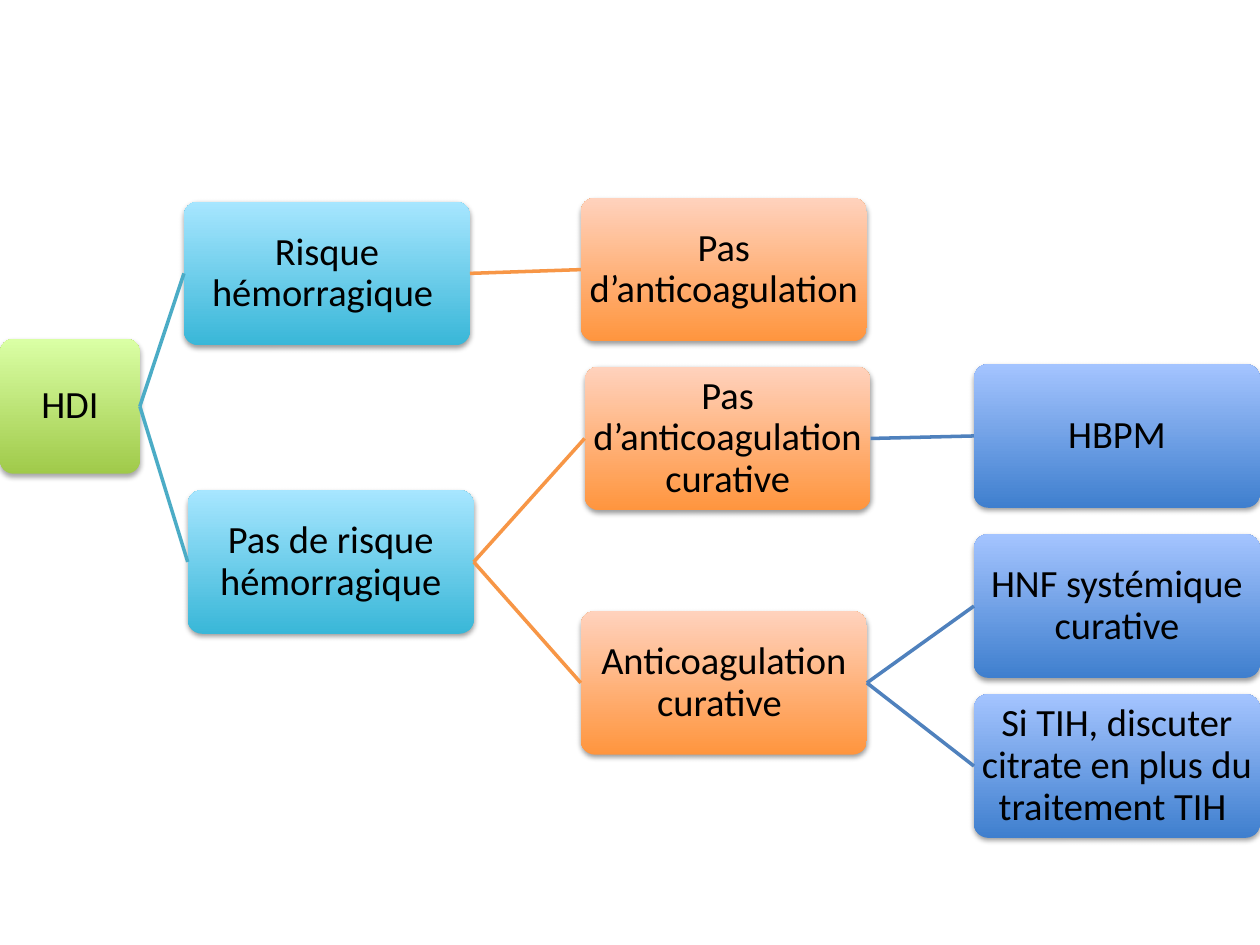
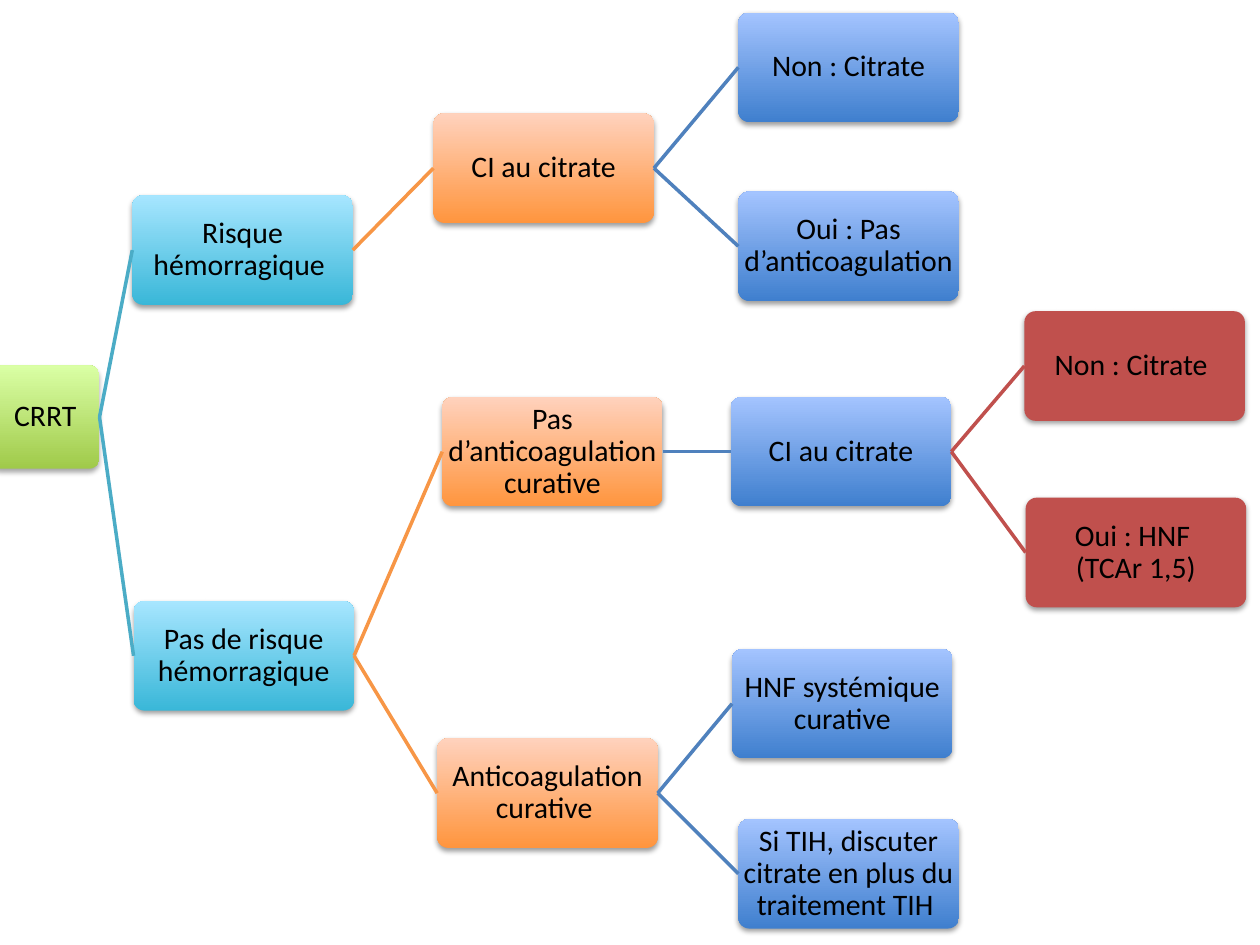
"""Build two decision trees on anticoagulation, for HDI and for CRRT."""
from lxml.etree import SubElement
from pptx import Presentation
from pptx.dml.color import RGBColor
from pptx.enum.shapes import MSO_CONNECTOR, MSO_SHAPE
from pptx.enum.text import MSO_ANCHOR, PP_ALIGN
from pptx.oxml.ns import qn
from pptx.util import Inches, Pt

FONT = "Calibri"
TEXT = "000000"
FILLS = [("A0CA4A", "DAFFA5"), ("39B7D8", "A7E6FF"), ("FF953E", "FFD2BD"),
         ("3F7FCE", "A4C4FF"), ("C0504D",)]
LINES = [None, "4BACC6", "F79646", "4F81BD", "C0504D"]

# Each node: text, level, left, top, index of its parent
HDI = [
    ("HDI", 0, 0, 2.69, None),
    ("Risque hémorragique ", 1, 1.46, 1.6, 0),
    ("Pas d’anticoagulation ", 2, 4.61, 1.57, 1),
    ("Pas de risque hémorragique", 1, 1.49, 3.89, 0),
    ("Pas d’anticoagulation curative", 2, 4.64, 2.91, 3),
    ("HBPM", 3, 7.73, 2.89, 4),
    ("Anticoagulation curative ", 2, 4.61, 4.85, 3),
    ("HNF systémique curative", 3, 7.73, 4.24, 6),
    ("Si TIH, discuter citrate en plus du traitement TIH ", 3, 7.73, 5.51, 6),
]
CRRT = [
    ("CRRT", 0, -0.07, 2.9, None),
    ("Risque hémorragique ", 1, 1.05, 1.55, 0),
    ("CI au citrate", 2, 3.44, 0.9, 1),
    ("Non : Citrate", 3, 5.86, 0.1, 2),
    ("Oui : Pas d’anticoagulation", 3, 5.86, 1.52, 2),
    ("Pas de risque hémorragique", 1, 1.06, 4.77, 0),
    ("Pas d’anticoagulation curative", 2, 3.51, 3.15, 5),
    ("CI au citrate", 3, 5.8, 3.15, 6),
    ("Non : Citrate ", 4, 8.13, 2.47, 7),
    ("Oui : HNF \v(TCAr 1,5)", 4, 8.14, 3.95, 7),
    ("Anticoagulation curative ", 2, 3.47, 5.86, 5),
    ("HNF systémique curative", 3, 5.81, 5.15, 10),
    ("Si TIH, discuter citrate en plus du traitement TIH ", 3, 5.86, 6.5, 10),
]
TREES = [
    (HDI, 22, 0.02, (1.11, 1.07), (2.27, 1.14)),
    (CRRT, 17, 0.01, (0.86, 0.82), (1.75, 0.87)),
]


def paint(color, value):
    """Set a colour from a hex string."""
    color.rgb = RGBColor.from_string(value)


def write(shape, text, size=22, inset=0.02, color=TEXT, align=PP_ALIGN.CENTER):
    """Put formatted text in a shape."""
    tf = shape.text_frame
    tf.word_wrap = True
    tf.vertical_anchor = MSO_ANCHOR.MIDDLE
    tf.margin_left = tf.margin_right = Inches(inset)
    tf.margin_top = tf.margin_bottom = Inches(inset)
    p = tf.paragraphs[0]
    p.text = text
    p.alignment = align
    p.line_spacing = 0.9
    for r in p.runs:
        r.font.name = FONT
        r.font.size = Pt(size)
        paint(r.font.color, color)


prs = Presentation()
prs.slide_width, prs.slide_height = Inches(10), Inches(7.5)

for nodes, size, inset, root_size, node_size in TREES:
    s = prs.slides.add_slide(prs.slide_layouts[6])
    boxes = []
    for text, level, left, top, parent in nodes:
        width, height = node_size if level else root_size
        sp = s.shapes.add_shape(MSO_SHAPE.ROUNDED_RECTANGLE, Inches(left),
                                Inches(top), Inches(width), Inches(height))
        sp.adjustments[0] = 0.1
        sp.line.fill.background()
        if len(FILLS[level]) == 1:
            sp.fill.solid()
            paint(sp.fill.fore_color, FILLS[level][0])
        else:
            sp.fill.gradient()
            sp.fill.gradient_angle = 90
            for stop, value in zip(sp.fill.gradient_stops, FILLS[level]):
                paint(stop.color, value)

        sp.shadow.inherit = False
        effects = sp._element.spPr.find(qn("a:effectLst"))
        shadow = SubElement(effects, qn("a:outerShdw"), blurRad=str(Pt(3.1)),
                            dist=str(Pt(1.6 if level else 1.8)),
                            dir="5400000", rotWithShape="0")
        black = SubElement(shadow, qn("a:srgbClr"), val="000000")
        SubElement(black, qn("a:alpha"), val="38000" if level else "35000")
        write(sp, text, size=size, inset=inset)
        boxes.append(sp)

        if parent is not None:
            link = s.shapes.add_connector(MSO_CONNECTOR.STRAIGHT, 0, 0, 0, 0)
            link.begin_connect(boxes[parent], 3)
            link.end_connect(sp, 1)
            link.line.width = Pt(2)
            paint(link.line.color, LINES[level])
            SubElement(link._element.spPr, qn("a:effectLst"))

prs.save("out.pptx")
